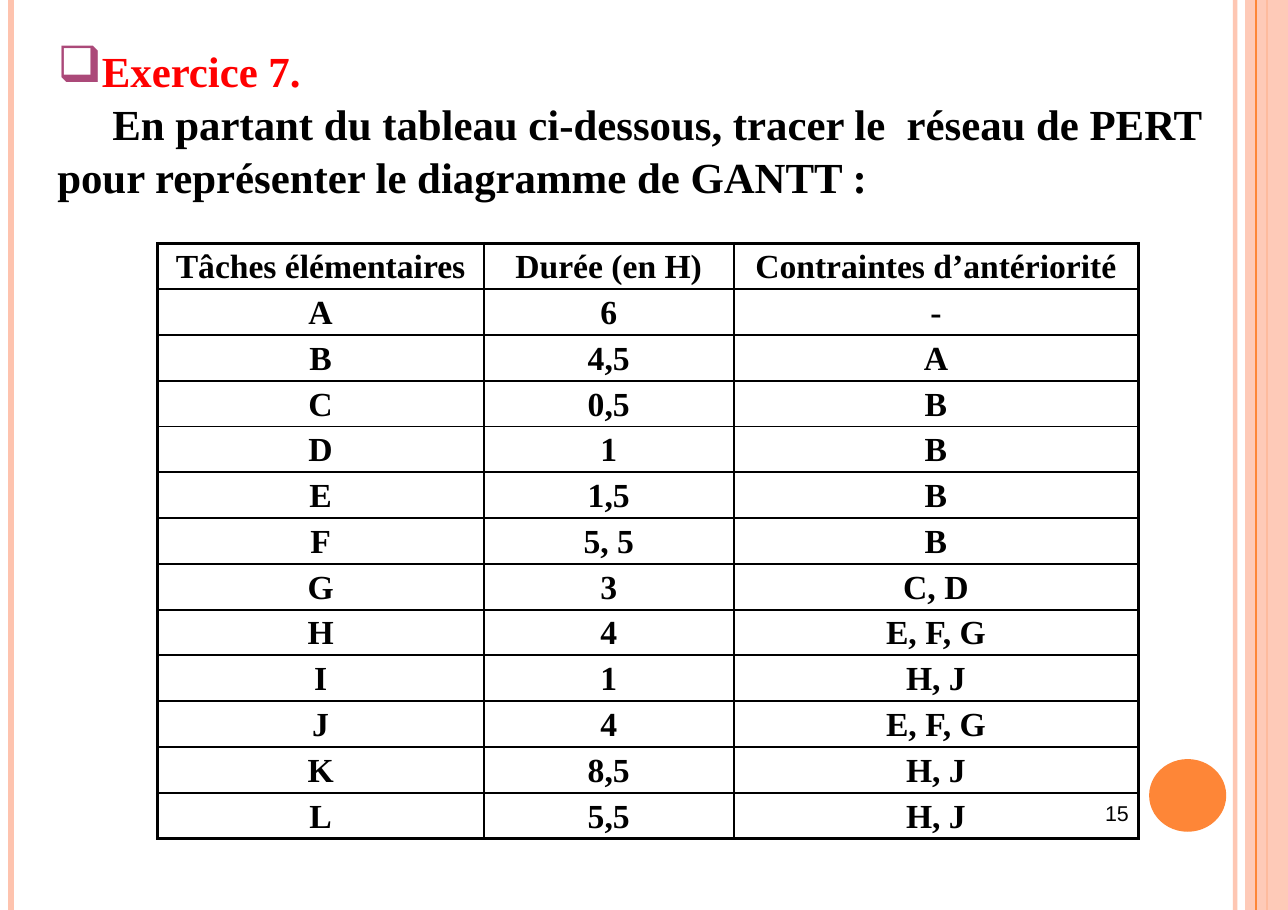
from dataclasses import dataclass

from pptx import Presentation
from pptx.dml.color import RGBColor
from pptx.enum.shapes import MSO_CONNECTOR, MSO_SHAPE
from pptx.enum.text import MSO_ANCHOR, MSO_AUTO_SIZE, PP_ALIGN
from pptx.oxml.ns import qn
from pptx.util import Inches, Pt
from lxml.etree import SubElement


@dataclass(frozen=True)
class Theme:
    text: str = "000000"
    title: str = "FF0000"
    bullet: str = "AB4979"
    accent: str = "FE8637"
    pale: str = "FEC3AE"
    serif: str = "Times New Roman"
    sans: str = "Arial"
    heading_size: float = 28
    table_size: float = 22
    number_size: float = 14
    heading_spacing: float = 34.6
    inner_border: float = 1.5
    outer_border: float = 2.25


@dataclass(frozen=True)
class Rule:
    x: float
    color: str
    width: float
    opacity: int = 100


@dataclass(frozen=True)
class Decoration:
    kind: MSO_SHAPE
    left: float
    top: float
    width: float
    height: float
    color: str
    opacity: int = 100


@dataclass(frozen=True)
class Task:
    name: str
    duration: str
    constraint: str


THEME = Theme()
SLIDE_WIDTH, SLIDE_HEIGHT = 11.69, 8.26
BACKDROP = [
    Rule(11.21, THEME.pale, 3, 93),
    Rule(0.1, THEME.pale, 4.5),
    Rule(11.5, THEME.accent, 1.5),
    Decoration(MSO_SHAPE.RECTANGLE, 11.3, 0, 0.39, SLIDE_HEIGHT, THEME.pale, 87),
    Rule(11.4, THEME.accent, 0.75),
    Decoration(MSO_SHAPE.OVAL, 10.43, 6.89, 0.7, 0.66, THEME.accent),
]
TABLE_ROWS = [
    Task("Tâches élémentaires", "Durée (en H)", "Contraintes d’antériorité"),
    Task("A", "6", "-"),
    Task("B", "4,5", "A"),
    Task("C", "0,5", "B"),
    Task("D", "1", "B"),
    Task("E", "1,5", "B"),
    Task("F", "5, 5", "B"),
    Task("G", "3", "C, D"),
    Task("H", "4", "E, F, G"),
    Task("I", "1", "H, J"),
    Task("J", "4", "E, F, G"),
    Task("K", "8,5", "H, J"),
    Task("L", "5,5", "H, J"),
]
COLUMN_WIDTHS = [2.96, 2.27, 3.67]
TABLE_HEIGHT = 5.4


def set_opacity(fill, percent: int) -> None:
    if percent < 100:
        color = fill._xPr.find(qn("a:solidFill"))[0]
        SubElement(color, qn("a:alpha"), val=str(percent * 1000))


def draw_rule(slide, rule: Rule) -> None:
    x = Inches(rule.x)
    connector = slide.shapes.add_connector(
        MSO_CONNECTOR.STRAIGHT, x, 0, x, Inches(SLIDE_HEIGHT))
    connector.line.width = Pt(rule.width)
    connector.line.color.rgb = RGBColor.from_string(rule.color)
    set_opacity(connector.line.fill, rule.opacity)
    SubElement(connector._element.spPr, qn("a:effectLst"))


def draw_decoration(slide, item: Decoration) -> None:
    shape = slide.shapes.add_shape(
        item.kind, Inches(item.left), Inches(item.top), Inches(item.width), Inches(item.height))
    shape.shadow.inherit = False
    shape.fill.solid()
    shape.fill.fore_color.rgb = RGBColor.from_string(item.color)
    set_opacity(shape.fill, item.opacity)
    shape.line.fill.background()


def format_text(frame, color: str, size: float, font: str, bold: bool, align: PP_ALIGN) -> None:
    for paragraph in frame.paragraphs:
        paragraph.alignment = align
        paragraph.space_before = Pt(0)
        for run in paragraph.runs:
            run.font.name = font
            run.font.size = Pt(size)
            run.font.bold = bold
            run.font.color.rgb = RGBColor.from_string(color)


def clear_frame(frame) -> None:
    frame.word_wrap = True
    frame.auto_size = MSO_AUTO_SIZE.NONE
    frame.vertical_anchor = MSO_ANCHOR.TOP
    frame.margin_left = frame.margin_right = frame.margin_top = frame.margin_bottom = 0


def fill_placeholder(placeholder, text: str, top: float, height: float, color: str, indent: float):
    placeholder.left, placeholder.top = Inches(0.51), Inches(top)
    placeholder.width, placeholder.height = Inches(10.5), Inches(height)
    frame = placeholder.text_frame
    clear_frame(frame)
    frame.text = text
    format_text(frame, color, THEME.heading_size, THEME.serif, True, PP_ALIGN.LEFT)
    paragraph = frame.paragraphs[0]
    paragraph.line_spacing = Pt(THEME.heading_spacing)
    properties = paragraph._p.get_or_add_pPr()
    properties.set("marL", str(Inches(0.01)))
    properties.set("indent", str(Inches(indent)))
    return properties


def add_heading(slide) -> None:
    title = fill_placeholder(slide.shapes.title, "Exercice 7.", 0.39, 0.48, THEME.title, 0)
    bullet_color = SubElement(title, qn("a:buClr"))
    SubElement(bullet_color, qn("a:srgbClr"), val=THEME.bullet)
    SubElement(title, qn("a:buSzPct"), val="117000")
    SubElement(title, qn("a:buChar"), char="❑")
    statement = fill_placeholder(
        slide.placeholders[1],
        "En partant du tableau ci-dessous, tracer le  réseau de PERT "
        "pour représenter le diagramme de GANTT :",
        0.87, 0.97, THEME.text, 0.5)
    SubElement(statement, qn("a:buNone"))


def add_page_number(slide) -> None:
    box = slide.shapes.add_textbox(Inches(10.03), Inches(7.26), Inches(0.26), Inches(0.25))
    clear_frame(box.text_frame)
    box.text_frame.text = "15"
    format_text(box.text_frame, THEME.text, THEME.number_size, THEME.sans, False, PP_ALIGN.LEFT)


def set_borders(cell, outer_sides: dict[str, bool]) -> None:
    properties = cell._tc.get_or_add_tcPr()
    for side, is_outer in outer_sides.items():
        width = THEME.outer_border if is_outer else THEME.inner_border
        line = SubElement(properties, qn(f"a:ln{side}"), w=str(Pt(width)))
        solid = SubElement(line, qn("a:solidFill"))
        SubElement(solid, qn("a:srgbClr"), val=THEME.text)


def add_task_table(slide) -> None:
    row_count, column_count = len(TABLE_ROWS), len(COLUMN_WIDTHS)
    table = slide.shapes.add_table(
        row_count, column_count, Inches(1.43), Inches(2.21),
        Inches(sum(COLUMN_WIDTHS)), Inches(TABLE_HEIGHT)).table
    table.first_row = table.horz_banding = False
    for column, width in zip(table.columns, COLUMN_WIDTHS):
        column.width = Inches(width)
    for row_index, task in enumerate(TABLE_ROWS):
        table.rows[row_index].height = Inches(TABLE_HEIGHT / row_count)
        for column_index, text in enumerate((task.name, task.duration, task.constraint)):
            cell = table.cell(row_index, column_index)
            cell.margin_left = cell.margin_right = cell.margin_bottom = 0
            cell.margin_top = Inches(0.05)
            cell.text_frame.text = text
            format_text(cell.text_frame, THEME.text, THEME.table_size, THEME.serif, True,
                        PP_ALIGN.CENTER)
            set_borders(cell, {
                "L": column_index == 0,
                "R": column_index == column_count - 1,
                "T": row_index == 0,
                "B": row_index == row_count - 1,
            })
            cell.fill.background()


def main() -> None:
    presentation = Presentation()
    presentation.slide_width = Inches(SLIDE_WIDTH)
    presentation.slide_height = Inches(SLIDE_HEIGHT)
    slide = presentation.slides.add_slide(presentation.slide_layouts[1])
    for item in BACKDROP:
        draw = draw_rule if isinstance(item, Rule) else draw_decoration
        draw(slide, item)
    add_page_number(slide)
    add_task_table(slide)
    add_heading(slide)
    presentation.save("out.pptx")


if __name__ == "__main__":
    main()
